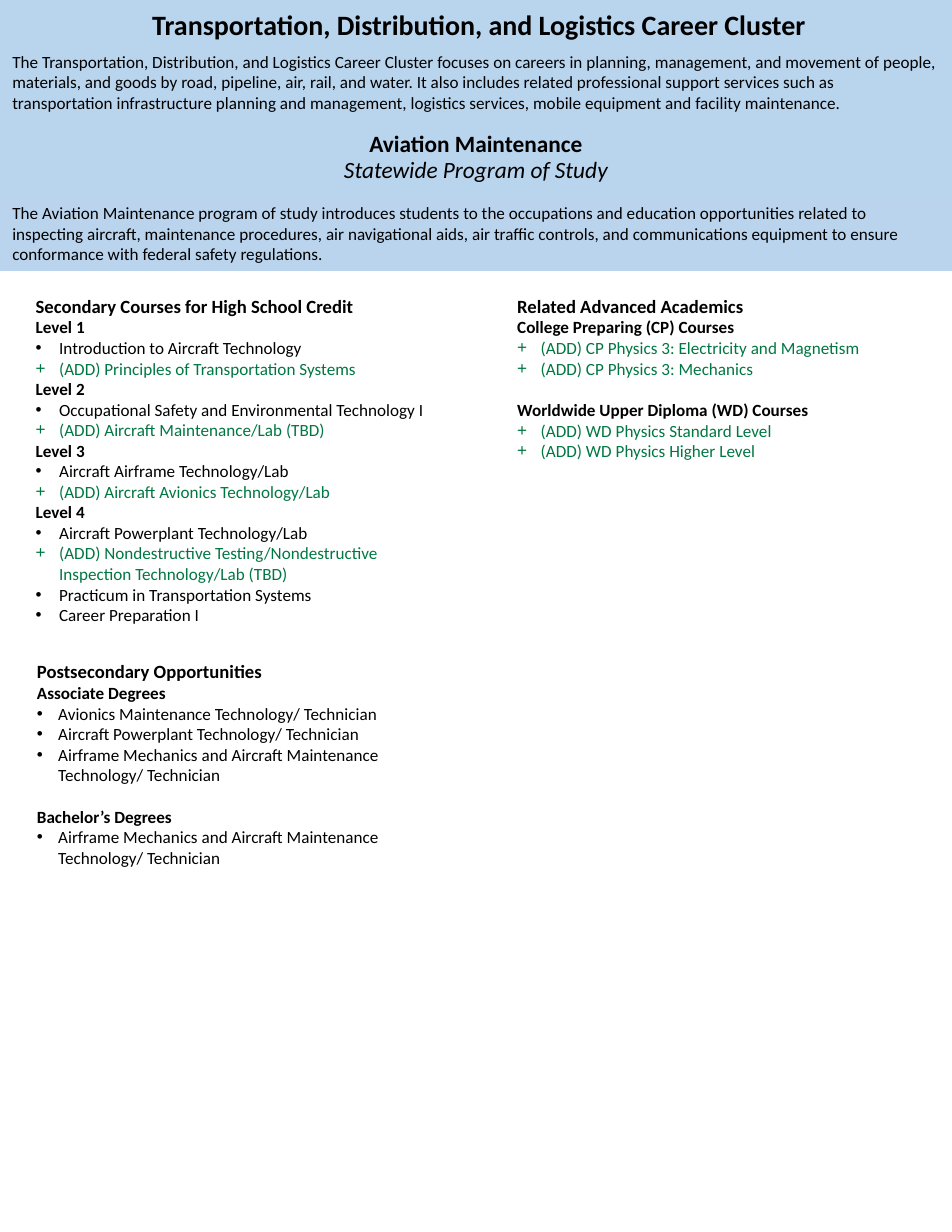
import pptx
import pptx.util
import pptx.dml.color
import pptx.enum.shapes
import pptx.enum.text
from lxml import etree

BLACK, GREEN = "000000", "007742"
ALIGN = pptx.enum.text.PP_ALIGN
ANCHOR = pptx.enum.text.MSO_ANCHOR
WIDE, TALL = 8.5, 11

# Paragraph styles: font values, then paragraph values
STYLES = {
    "title": ({"size": 18, "bold": True}, {"alignment": ALIGN.CENTER, "space_after": 6.6}),
    "name": ({"size": 15, "bold": True}, {"alignment": ALIGN.CENTER, "line_spacing": 0.9}),
    "kind": ({"size": 15, "italic": True}, {"alignment": ALIGN.CENTER, "line_spacing": 0.9}),
    "text": ({"size": 11}, {}),
    "head": ({"size": 12, "bold": True}, {}),
    "sub": ({"size": 11, "bold": True}, {}),
    "next": ({"size": 11, "bold": True}, {"space_before": 13.4}),
    "•": ({"size": 11}, {}),
    "+": ({"size": 11}, {}),
}

# Bands: height, fill, paragraphs; each overlaps the next to hide the seam
LAP = 0.01
BANDS = [
    (1.06, "B9D4ED", [
        ("title", " Transportation, Distribution, and Logistics Career Cluster"),
        ("text", "The Transportation, Distribution, and Logistics Career Cluster focuses on careers in planning, management, and movement of people, materials, and goods by road, pipeline, air, rail, and water. It also includes related professional support services such as transportation infrastructure planning and management, logistics services, mobile equipment and facility maintenance."),
    ]),
    (0.69, "B9D4ED", [
        ("name", "Aviation Maintenance"),
        ("kind", "Statewide Program of Study"),
    ]),
    (0.66, "BAD4ED", [
        ("text", "The Aviation Maintenance program of study introduces students to the occupations and education opportunities related to inspecting aircraft, maintenance procedures, air navigational aids, air traffic controls, and communications equipment to ensure conformance with federal safety regulations."),
    ]),
]

# Lists: column, top, height, side inset, bullet indent, paragraphs
LEFT, STEP, SPAN = 0.22, 4.3, 3.9
LISTS = [
    (0, 2.58, 3.1, 0.1, 0.21, [
        ("head", "Secondary Courses for High School Credit"),
        ("sub", "Level 1"),
        ("•", "Introduction to Aircraft Technology"),
        ("+", "(ADD) Principles of Transportation Systems"),
        ("sub", "Level 2"),
        ("•", "Occupational Safety and Environmental Technology I"),
        ("+", "(ADD) Aircraft Maintenance/Lab (TBD)"),
        ("sub", "Level 3"),
        ("•", "Aircraft Airframe Technology/Lab"),
        ("+", "(ADD) Aircraft Avionics Technology/Lab"),
        ("sub", "Level 4"),
        ("•", "Aircraft Powerplant Technology/Lab"),
        ("+", "(ADD) Nondestructive Testing/Nondestructive Inspection Technology/Lab (TBD)"),
        ("•", "Practicum in Transportation Systems"),
        ("•", "Career Preparation I"),
    ]),
    (1, 2.58, 1.72, 0.1, 0.21, [
        ("head", "Related Advanced Academics"),
        ("sub", "College Preparing (CP) Courses"),
        ("+", "(ADD) CP Physics 3: Electricity and Magnetism"),
        ("+", "(ADD) CP Physics 3: Mechanics"),
        ("next", "Worldwide Upper Diploma (WD) Courses"),
        ("+", "(ADD) WD Physics Standard Level"),
        ("+", "(ADD) WD Physics Higher Level"),
    ]),
    (0, 5.84, 3.1, 0.11, 0.19, [
        ("head", "Postsecondary Opportunities"),
        ("sub", "Associate Degrees"),
        ("•", "Avionics Maintenance Technology/ Technician"),
        ("•", "Aircraft Powerplant Technology/ Technician"),
        ("•", "Airframe Mechanics and Aircraft Maintenance Technology/ Technician"),
        ("next", "Bachelor’s Degrees"),
        ("•", "Airframe Mechanics and Aircraft Maintenance Technology/ Technician"),
    ]),
]


def inch(*sizes):
    return [pptx.util.Inches(size) for size in sizes]


def color(code):
    return pptx.dml.color.RGBColor.from_string(code)


def mark(para, sign, dent):
    """Give the paragraph a hanging bullet."""
    props = para._p.get_or_add_pPr()
    props.set("marL", str(pptx.util.Inches(dent)))
    props.set("indent", str(-pptx.util.Inches(dent)))
    name = pptx.oxml.ns.qn
    etree.SubElement(props, name("a:buFont")).set("typeface", "Arial")
    etree.SubElement(props, name("a:buChar")).set("char", sign)


def write(shape, paras, side, anchor, dent=0):
    frame = shape.text_frame
    left, top = inch(side, side / 2)
    form = {"word_wrap": True, "vertical_anchor": anchor,
            "margin_left": left, "margin_right": left,
            "margin_top": top, "margin_bottom": top}
    for key, value in form.items():
        setattr(frame, key, value)
    for num, (style, text) in enumerate(paras):
        para = frame.add_paragraph() if num else frame.paragraphs[0]
        face, form = STYLES[style]
        for key, value in {"alignment": ALIGN.LEFT, **form}.items():
            setattr(para, key, pptx.util.Pt(value) if key.startswith("space") else value)
        if style in "•+":
            mark(para, style, dent)
        run = para.add_run()
        run.text = text
        for key, value in {"name": "Calibri", "bold": False, **face}.items():
            setattr(run.font, key, pptx.util.Pt(value) if key == "size" else value)
        run.font.color.rgb = color(GREEN if style == "+" else BLACK)


def main():
    deck = pptx.Presentation()
    deck.slide_width, deck.slide_height = inch(WIDE, TALL)
    shapes = deck.slides.add_slide(deck.slide_layouts[6]).shapes

    top = 0
    for high, fill, paras in BANDS:
        band = shapes.add_shape(pptx.enum.shapes.MSO_SHAPE.RECTANGLE,
                                *inch(0, top, WIDE, high + LAP))
        band.shadow.inherit = False
        band.fill.solid()
        band.fill.fore_color.rgb = color(fill)
        band.line.fill.background()
        write(band, paras, 0.11, ANCHOR.MIDDLE)
        top += high

    for col, top, high, side, dent, paras in LISTS:
        box = shapes.add_textbox(*inch(LEFT + col * STEP, top, SPAN, high))
        write(box, paras, side, ANCHOR.TOP, dent)

    deck.save("out.pptx")


if __name__ == "__main__":
    main()
